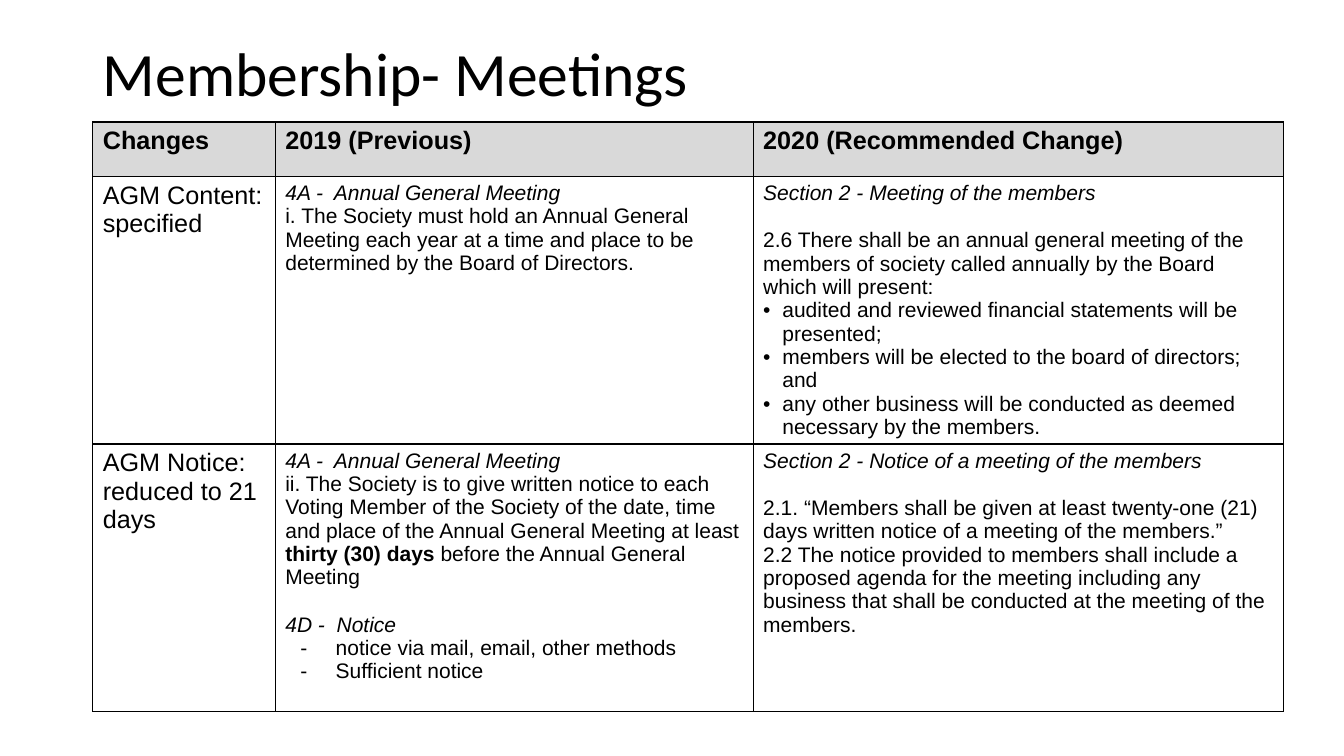
"""Build the slide that compares old and new membership meeting rules."""
from dataclasses import dataclass

from lxml import etree
from pptx import Presentation
from pptx.dml.color import RGBColor
from pptx.enum.text import MSO_ANCHOR, PP_ALIGN
from pptx.oxml.ns import qn
from pptx.slide import Slide
from pptx.table import _Cell
from pptx.text.text import _Paragraph
from pptx.util import Inches, Pt

LEFT = PP_ALIGN.LEFT
MIDDLE = MSO_ANCHOR.MIDDLE


@dataclass(frozen=True)
class Theme:
    ink: str = "000000"
    head: str = "D9D9D9"
    paper: str = "FFFFFF"
    face: str = "Arial"
    display: str = "Calibri"
    title: int = 44
    label: int = 18
    body: int = 15
    gap: float = 17.25
    border: int = 1


@dataclass(frozen=True)
class Mark:
    sign: str
    margin: float
    hang: float


@dataclass(frozen=True)
class Line:
    text: str
    size: int
    strong: str = ""
    bold: bool = False
    italic: bool = False
    gap: bool = False
    mark: Mark | None = None


THEME = Theme()
DOT = Mark("•", 0.19, 0.19)
DASH = Mark("-", 0.5, 0.35)
COLS = (1.81, 4.74, 5.26)
ROWS = (0.54, 2.64, 2.65)


def head(text: str) -> list[Line]:
    """Return the text of a header cell."""
    return [Line(text, THEME.label, bold=True)]


def label(text: str) -> list[Line]:
    """Return the text of a row label."""
    return [Line(text, THEME.label)]


def rule(text: str, gap: bool = False) -> Line:
    """Return the italic name of a rule."""
    return Line(text, THEME.body, italic=True, gap=gap)


def body(text: str, gap: bool = False, strong: str = "") -> Line:
    """Return a plain paragraph."""
    return Line(text, THEME.body, gap=gap, strong=strong)


def item(text: str, mark: Mark) -> Line:
    """Return a list entry."""
    return Line(text, THEME.body, mark=mark)


CELLS = [
    [head("Changes"), head("2019 (Previous)"), head("2020 (Recommended Change)")],
    [
        label("AGM Content: specified"),
        [
            rule("4A -  Annual General Meeting"),
            body("i. The Society must hold an Annual General Meeting each year at a time "
                 "and place to be determined by the Board of Directors."),
        ],
        [
            rule("Section 2 - Meeting of the members"),
            body("2.6 There shall be an annual general meeting of the members of society "
                 "called annually by the Board which will present:", gap=True),
            item("audited and reviewed financial statements will be presented;", DOT),
            item("members will be elected to the board of directors; and", DOT),
            item("any other business will be conducted as deemed necessary by the members.", DOT),
        ],
    ],
    [
        label("AGM Notice: reduced to 21 days"),
        [
            rule("4A -  Annual General Meeting"),
            body("ii. The Society is to give written notice to each Voting Member of the "
                 "Society of the date, time and place of the Annual General Meeting at least "
                 "thirty (30) days before the Annual General Meeting",
                 strong="thirty (30) days"),
            rule("4D -  Notice", gap=True),
            item("notice via mail, email, other methods", DASH),
            item("Sufficient notice", DASH),
        ],
        [
            rule("Section 2 - Notice of a meeting of the members"),
            body("2.1. “Members shall be given at least twenty-one (21) days written notice "
                 "of a meeting of the members.”", gap=True),
            body("2.2 The notice provided to members shall include a proposed agenda for the "
                 "meeting including any business that shall be conducted at the meeting of "
                 "the members."),
        ],
    ],
]


def add_mark(para: _Paragraph, mark: Mark) -> None:
    """Give a paragraph a bullet and a hanging indent."""
    props = para._p.get_or_add_pPr()
    props.set("marL", str(Inches(mark.margin)))
    props.set("indent", str(-Inches(mark.hang)))
    tint = etree.SubElement(props, qn("a:buClr"))
    etree.SubElement(tint, qn("a:srgbClr"), val=THEME.ink)
    etree.SubElement(props, qn("a:buFont"), typeface=THEME.face)
    etree.SubElement(props, qn("a:buChar"), char=mark.sign)


def write(para: _Paragraph, line: Line) -> None:
    """Write and format one paragraph."""
    parts = line.text.partition(line.strong) if line.strong else (line.text,)
    for part in parts:
        run = para.add_run()
        run.text = part
        font = run.font
        font.name = THEME.face
        font.size = Pt(line.size)
        font.bold = line.bold or part == line.strong
        font.italic = line.italic
        font.color.rgb = RGBColor.from_string(THEME.ink)
    if line.gap:
        para.space_before = Pt(THEME.gap)
    if line.mark:
        add_mark(para, line.mark)


def style(cell: _Cell, fill: str) -> None:
    """Draw the borders and fill of a cell."""
    props = cell._tc.get_or_add_tcPr()
    for side in ("L", "R", "T", "B"):
        edge = etree.SubElement(props, qn(f"a:ln{side}"), w=str(Pt(THEME.border)))
        solid = etree.SubElement(edge, qn("a:solidFill"))
        etree.SubElement(solid, qn("a:srgbClr"), val=THEME.ink)
    cell.fill.solid()
    cell.fill.fore_color.rgb = RGBColor.from_string(fill)


def add_title(slide: Slide, text: str) -> None:
    """Place and format the title."""
    title = slide.shapes.title
    title.left, title.top = Inches(0.92), Inches(0.03)
    title.width, title.height = Inches(11.5), Inches(1.45)
    frame = title.text_frame
    frame.text = text
    frame.vertical_anchor = MIDDLE
    para = frame.paragraphs[0]
    para.alignment = LEFT
    para.line_spacing = 0.9
    font = para.runs[0].font
    font.name = THEME.display
    font.size = Pt(THEME.title)
    font.color.rgb = RGBColor.from_string(THEME.ink)


def add_grid(slide: Slide) -> None:
    """Add the table of changes."""
    table = slide.shapes.add_table(
        len(ROWS), len(COLS), Inches(0.92), Inches(1.21),
        Inches(sum(COLS)), Inches(sum(ROWS))).table
    for col, width in zip(table.columns, COLS):
        col.width = Inches(width)
    for r, height in enumerate(ROWS):
        table.rows[r].height = Inches(height)
        for c, lines in enumerate(CELLS[r]):
            cell = table.cell(r, c)
            style(cell, THEME.paper if r else THEME.head)
            frame = cell.text_frame
            for i, line in enumerate(lines):
                write(frame.add_paragraph() if i else frame.paragraphs[0], line)


def main() -> None:
    """Build and save the slide."""
    deck = Presentation()
    deck.slide_width, deck.slide_height = Inches(13.33), Inches(7.5)
    slide = deck.slides.add_slide(deck.slide_layouts[5])
    add_title(slide, "Membership- Meetings")
    add_grid(slide)
    deck.save("out.pptx")


if __name__ == "__main__":
    main()
